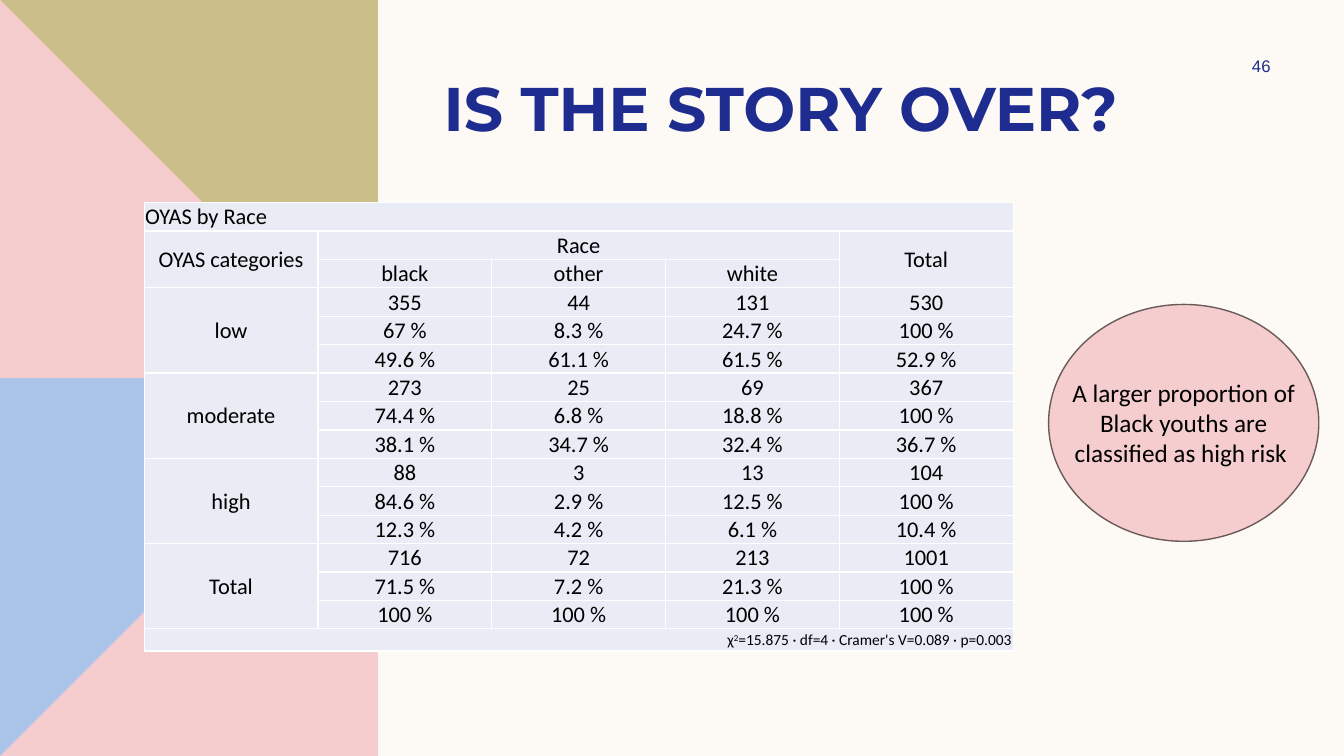
from lxml import etree
from pptx import Presentation
from pptx import util as u
from pptx.dml import color
from pptx.enum import shapes, text
from pptx.oxml import ns

INK, ROSE, CREAM = "1F2C8F", "F5CDCE", "FDFAF6"
LEFT, MID, RIGHT = text.PP_ALIGN.LEFT, text.PP_ALIGN.CENTER, text.PP_ALIGN.RIGHT
TOP, CENTRE = text.MSO_ANCHOR.TOP, text.MSO_ANCHOR.MIDDLE
BODY = {"name": "Calibri", "size": u.Pt(16), "bold": False}

# Counts for black, other, white and all youths
COUNTS = {
    "low": (355, 44, 131, 530),
    "moderate": (273, 25, 69, 367),
    "high": (88, 3, 13, 104),
    "Total": (716, 72, 213, 1001),
}
STATS = ("χ", "2", "=15.875 · df=4 · Cramer's V=0.089 · p=0.003")


def paint(form, tint):
    form.solid()
    form.fore_color.rgb = color.RGBColor.from_string(tint)


def style(item, values):
    for name, value in values.items():
        setattr(item, name, value)


def place(item, box):
    names = ("left", "top", "width", "height")
    style(item, dict(zip(names, map(u.Inches, box))))


def write(frame, words, font, tint, align, anchor=TOP):
    """Write a string, or a sequence of runs, as one paragraph."""
    style(frame, {"word_wrap": True, "vertical_anchor": anchor})
    para = frame.paragraphs[0]
    para.alignment = align
    for part in [words] if isinstance(words, str) else words:
        run = para.add_run()
        run.text = part
        style(run.font, font)
        paint(run.font.fill, tint)
    return para


def label(slide, box, words, font, tint, anchor=TOP):
    area = slide.shapes.add_textbox(*map(u.Inches, box))
    write(area.text_frame, words, font, tint, MID, anchor)


def patch(slide, box, points, tint):
    """Draw a polygon whose points are fractions of the box."""
    x, y, w, h = box
    spots = [(u.Inches(x + a * w), u.Inches(y + b * h)) for a, b in points]
    pen = slide.shapes.build_freeform(*spots[0])
    pen.add_line_segments(spots[1:])
    shape = pen.convert_to_shape()
    shape.shadow.inherit = False
    shape.line.fill.background()
    paint(shape.fill, tint)


def panel(slide, box):
    """Side panel: two squares, each cut along a diagonal."""
    x, y, w, h = box
    half = h / 2
    full = [(0, 0), (1, 0), (1, 1), (0, 1)]
    low = (x, y + half, w, half)
    high = (x, y, w, half)
    patch(slide, low, full, "AAC3E8")
    patch(slide, low, [(1, 0), (1, 1), (0, 1)], ROSE)
    patch(slide, high, full, "CCBE89")
    patch(slide, high, [(0, 0), (1, 1), (0, 1)], ROSE)


def header(slide, box):
    """Title, with the page number at its upper right."""
    x, y, w, h = box
    title = slide.shapes.title
    place(title, box)
    title.text_frame.auto_size = text.MSO_AUTO_SIZE.NONE
    font = {"name": "Montserrat", "size": u.Pt(44), "bold": True}
    write(title.text_frame, "IS THE STORY OVER?", font, INK, LEFT, CENTRE)
    label(slide, (x + w, y - 0.14, 1.08, 0.3), "46",
          {"name": "Arial", "size": u.Pt(12)}, INK, CENTRE)


def edge(cell):
    """Put a thin white line on all four sides."""
    props = cell._tc.get_or_add_tcPr()
    for spot, side in enumerate(("lnL", "lnR", "lnT", "lnB")):
        line = etree.Element(ns.qn("a:" + side), w=str(u.Pt(1)))
        fill = etree.SubElement(line, ns.qn("a:solidFill"))
        etree.SubElement(fill, ns.qn("a:srgbClr"), val="FFFFFF")
        props.insert(spot, line)


def share(part, whole):
    return f"{round(100 * part / whole, 1):g} %"


def cross(slide, box):
    """Cross table: counts, row shares and column shares."""
    x, y, w, h = box
    rows, cols, foot = 16, 5, 0.22
    frame = slide.shapes.add_table(rows, cols, *map(u.Inches, box))
    grid = frame.table
    style(grid, {"first_row": False, "horz_banding": False})
    for col in grid.columns:
        col.width = u.Inches(w / cols)
    for row in grid.rows:
        row.height = u.Inches((h - foot) / (rows - 1))
    grid.rows[rows - 1].height = u.Inches(foot)
    for cell in grid.iter_cells():
        style(cell, {"margin_left": u.Inches(0.01), "margin_right": u.Inches(0.01),
                     "margin_top": u.Inches(0.01), "margin_bottom": 0,
                     "vertical_anchor": CENTRE})
        paint(cell.fill, "E9EBF5")
        edge(cell)

    def put(row, col, words, down=1, over=1, align=MID, font=BODY):
        cell = grid.cell(row, col)
        if down * over > 1:
            cell.merge(grid.cell(row + down - 1, col + over - 1))
        return write(cell.text_frame, words, font, "000000", align, CENTRE)

    # Headings
    put(0, 0, "OYAS by Race", over=cols, align=LEFT)
    put(1, 0, "OYAS categories", down=2)
    put(1, 1, "Race", over=3)
    put(1, 4, "Total", down=2)
    for col, race in enumerate(("black", "other", "white"), 1):
        put(2, col, race)

    # Three rows for each risk category
    for group, (name, counts) in enumerate(COUNTS.items()):
        row = 3 + 3 * group
        put(row, 0, name, down=3)
        for col, (count, total) in enumerate(zip(counts, COUNTS["Total"]), 1):
            put(row, col, str(count))
            put(row + 1, col, share(count, counts[-1]))
            put(row + 2, col, share(count, total))

    # Test statistics
    para = put(rows - 1, 0, STATS, over=cols, align=RIGHT,
               font={**BODY, "size": u.Pt(11)})
    para.runs[1].font._element.set("baseline", "30000")


def remark(slide, box):
    """Oval with a remark across its middle."""
    x, y, w, h = box
    oval = slide.shapes.add_shape(shapes.MSO_SHAPE.OVAL, *map(u.Inches, box))
    oval.shadow.inherit = False
    paint(oval.fill, ROSE)
    paint(oval.line.fill, "6B5A5A")
    oval.line.width = u.Pt(1)
    label(slide, (x + 0.1, y + 0.67, w - 0.2, 1.01),
          "A larger proportion of Black youths are classified as high risk ",
          {**BODY, "size": u.Pt(18)}, "000000")


def main():
    deck = Presentation()
    style(deck, {"slide_width": u.Inches(13.33), "slide_height": u.Inches(7.5)})
    slide = deck.slides.add_slide(deck.slide_layouts[5])
    paint(slide.background.fill, CREAM)
    panel(slide, (0, 0, 3.75, 7.5))
    header(slide, (4.3, 0.64, 7.67, 0.84))
    cross(slide, (1.43, 2.01, 8.62, 4.45))
    remark(slide, (10.4, 3.02, 2.68, 2.35))
    deck.save("out.pptx")


if __name__ == "__main__":
    main()
